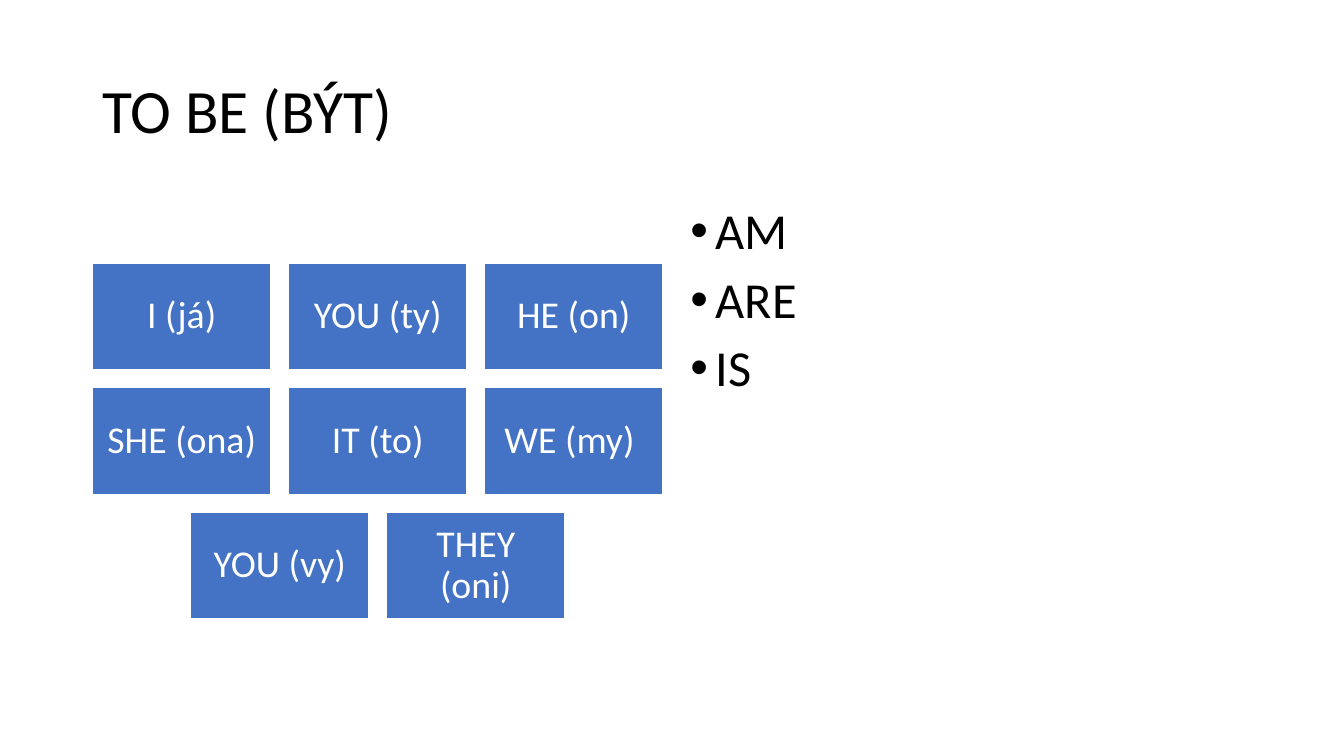
from lxml import etree
from pptx import Presentation
from pptx import util as u
from pptx.dml.color import RGBColor
from pptx.enum import shapes, text
from pptx.oxml.ns import qn

BLACK = RGBColor(0x00, 0x00, 0x00)
WHITE = RGBColor(0xFF, 0xFF, 0xFF)
BLUE = RGBColor(0x44, 0x72, 0xC4)

PRONOUN_ROWS = [
    ["I (já)", "YOU (ty)", "HE (on)"],
    ["SHE (ona)", "IT (to)", "WE (my) "],
    ["YOU (vy)", "THEY (oni)"],
]
VERB_FORMS = ["AM", "ARE", "IS"]


def set_all(target, values):
    for name, value in values.items():
        setattr(target, name, value)


def write(para, words, size, color, **layout):
    span = para.add_run()
    span.text = words
    set_all(span.font, {"name": "Calibri", "size": u.Pt(size)})
    span.font.color.rgb = color
    set_all(para, {"line_spacing": 0.9, **layout})


deck = Presentation()
set_all(deck, {"slide_width": u.Cm(33.87), "slide_height": u.Cm(19.05)})
page = deck.slides.add_slide(deck.slide_layouts[5])

# Title
title = page.shapes.title
set_all(title, {"left": u.Cm(2.33), "top": u.Cm(1.01),
                "width": u.Cm(29.21), "height": u.Cm(3.68)})
set_all(title.text_frame, {"vertical_anchor": text.MSO_ANCHOR.MIDDLE,
                           "auto_size": text.MSO_AUTO_SIZE.NONE})
write(title.text_frame.paragraphs[0], "TO BE (BÝT)", 44, BLACK,
      alignment=text.PP_ALIGN.LEFT)

# Pronoun tiles, each row centred on the same axis
tile_width, tile_height = 4.5, 2.69
column_step, row_step = 4.94, 3.14
grid_center, grid_top = 9.52, 6.63
margins = {f"margin_{side}": u.Cm(0.28)
           for side in ("left", "top", "right", "bottom")}
for row, pronouns in enumerate(PRONOUN_ROWS):
    row_width = (len(pronouns) - 1) * column_step + tile_width
    row_left = grid_center - row_width / 2
    for column, pronoun in enumerate(pronouns):
        tile = page.shapes.add_shape(
            shapes.MSO_SHAPE.RECTANGLE,
            u.Cm(row_left + column * column_step),
            u.Cm(grid_top + row * row_step),
            u.Cm(tile_width), u.Cm(tile_height))
        tile.shadow.inherit = False
        tile.fill.solid()
        tile.fill.fore_color.rgb = BLUE
        tile.line.color.rgb = WHITE
        tile.line.width = u.Pt(1)
        set_all(tile.text_frame, {
            "word_wrap": True,
            "vertical_anchor": text.MSO_ANCHOR.MIDDLE, **margins})
        write(tile.text_frame.paragraphs[0], pronoun, 27, WHITE,
              alignment=text.PP_ALIGN.CENTER)

# Bulleted verb forms
box = page.shapes.add_textbox(u.Cm(17.15), u.Cm(5.07), u.Cm(14.4), u.Cm(12.09))
box.text_frame.word_wrap = True
for index, form in enumerate(VERB_FORMS):
    para = box.text_frame.paragraphs[0] if index == 0 else box.text_frame.add_paragraph()
    write(para, form, 36, BLACK, space_before=u.Pt(10))
    properties = para._p.get_or_add_pPr()
    properties.set("marL", str(u.Cm(0.64)))
    properties.set("indent", str(u.Cm(-0.64)))
    etree.SubElement(properties, qn("a:buFont")).set("typeface", "Arial")
    etree.SubElement(properties, qn("a:buChar")).set("char", "•")

deck.save("out.pptx")
